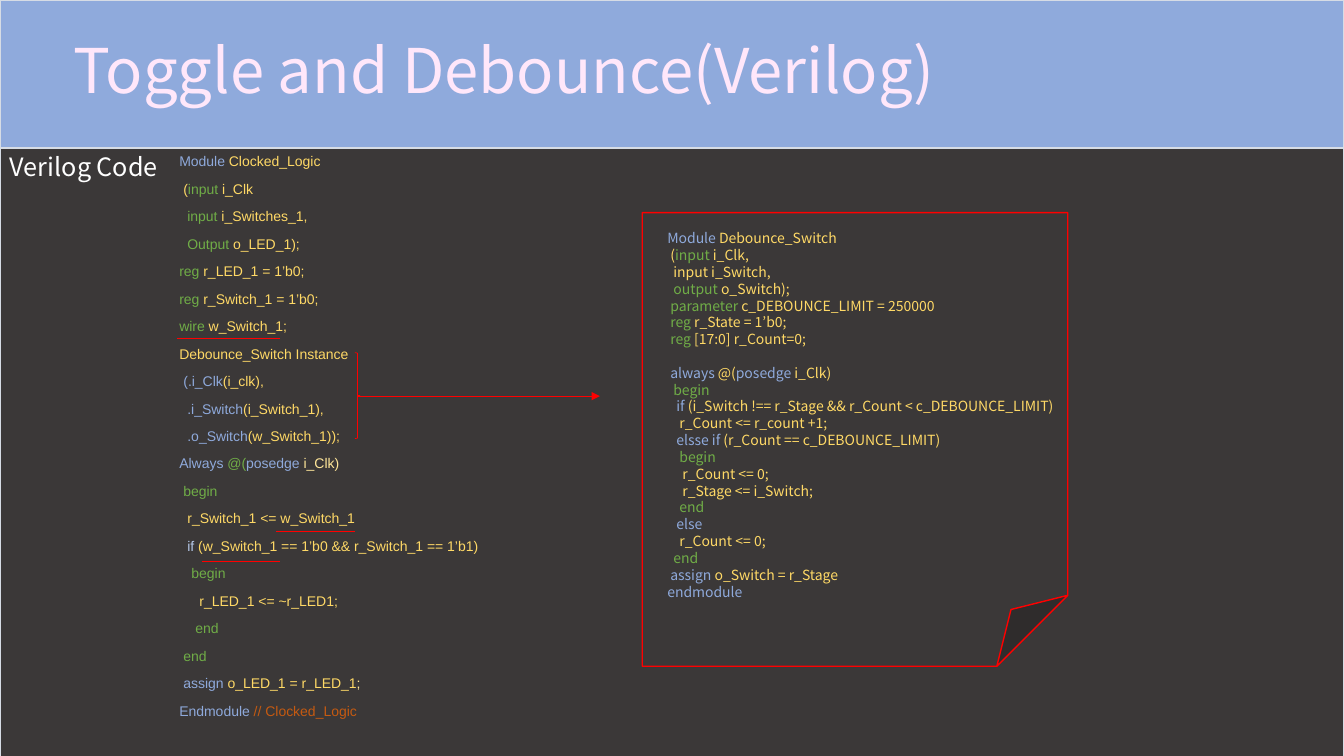
"""Build the Toggle and Debounce (Verilog) slide."""
from dataclasses import dataclass
from typing import NamedTuple

from lxml import etree
from pptx import Presentation
from pptx.dml.color import RGBColor
from pptx.enum.shapes import MSO_CONNECTOR, MSO_SHAPE
from pptx.enum.text import MSO_ANCHOR, MSO_AUTO_SIZE
from pptx.oxml.ns import qn
from pptx.shapes.connector import Connector
from pptx.slide import Slide
from pptx.text.text import TextFrame
from pptx.util import Inches, Pt

RECTANGLE = MSO_SHAPE.RECTANGLE
FOLDED_CORNER = MSO_SHAPE.FOLDED_CORNER
RIGHT_BRACE = MSO_SHAPE.RIGHT_BRACE
STRAIGHT = MSO_CONNECTOR.STRAIGHT
TOP = MSO_ANCHOR.TOP
MIDDLE = MSO_ANCHOR.MIDDLE
NO_AUTO_SIZE = MSO_AUTO_SIZE.NONE

CHARCOAL = RGBColor(0x3B, 0x38, 0x38)
PALE_BLUE = RGBColor(0xD6, 0xDC, 0xE5)
BLUE = RGBColor(0x8F, 0xAA, 0xDC)
LIGHT_BLUE = RGBColor(0xB4, 0xC7, 0xE7)
PINK = RGBColor(0xFF, 0xE7, 0xFA)
WHITE = RGBColor(0xFF, 0xFF, 0xFF)
RED = RGBColor(0xFF, 0x00, 0x00)
GREEN = RGBColor(0x70, 0xAD, 0x47)
YELLOW = RGBColor(0xFF, 0xD9, 0x66)
CREAM = RGBColor(0xFF, 0xE6, 0x99)
RUST = RGBColor(0xC5, 0x5A, 0x11)

HEADING_FONT = "Noto Sans CJK KR"
CODE_FONT = "Arial"


class Box(NamedTuple):
    """Left, top, width and height in inches."""
    left: float
    top: float
    width: float
    height: float


class Token(NamedTuple):
    """A piece of code in one colour."""
    text: str
    color: RGBColor = YELLOW


@dataclass
class CodeLine:
    """A line of code with its indent level and any extra gap in points."""
    indent: int
    tokens: list[Token]
    gap: float = 0


@dataclass
class Panel:
    """A preset shape with its outline and optional fill."""
    kind: MSO_SHAPE
    box: Box
    line: RGBColor
    weight: float = 1
    fill: RGBColor | None = None


@dataclass
class Rule:
    """A red line between two points, with an optional arrowhead."""
    start: tuple[float, float]
    end: tuple[float, float]
    arrow: bool = False


@dataclass
class Listing:
    """A block of code with its font and spacing."""
    box: Box
    font: str
    indent_step: float
    lines: list[CodeLine]
    line_spacing: float = 1.0
    space_before: float = 0


PANELS = [
    Panel(RECTANGLE, Box(0, 1.39, 13.33, 6.18), PALE_BLUE, fill=CHARCOAL),
    Panel(FOLDED_CORNER, Box(6.37, 2.11, 4.22, 4.5), RED, fill=CHARCOAL),
    Panel(RECTANGLE, Box(0, 0, 13.33, 1.47), PALE_BLUE, fill=BLUE),
    Panel(RIGHT_BRACE, Box(3.52, 3.5, 0.05, 0.85), RED, weight=0.5),
]

RULES = [
    Rule((1.76, 3.36), (2.78, 3.36)),
    Rule((2.74, 5.27), (3.52, 5.27)),
    Rule((2, 5.57), (2.78, 5.57)),
    Rule((3.55, 3.93), (5.95, 3.93), arrow=True),
]

CLOCKED_LOGIC = Listing(Box(1.68, 1.5, 4.28, 5.86), CODE_FONT, 0.04, [
    CodeLine(0, [Token("Module ", BLUE), Token("Clocked_Logic")]),
    CodeLine(1, [Token("("), Token("input ", GREEN), Token("i_Clk")]),
    CodeLine(2, [Token("input ", GREEN), Token("i_Switches_1,")]),
    CodeLine(2, [Token("Output", GREEN), Token(" o_LED_1);")]),
    CodeLine(0, [Token("reg", GREEN), Token(" r_LED_1 = 1’b0;")]),
    CodeLine(0, [Token("reg", GREEN), Token(" r_Switch_1 = 1’b0;")]),
    CodeLine(0, [Token("wire", GREEN), Token(" w_Switch_1;")]),
    CodeLine(0, [Token("Debounce_Switch Instance")]),
    CodeLine(1, [Token("(.i_Clk", BLUE), Token("(i_clk),")]),
    CodeLine(2, [Token(".i_Switch", BLUE), Token("(i_Switch_1),")]),
    CodeLine(2, [Token(".o_Switch", BLUE), Token("(w_Switch_1));")]),
    CodeLine(0, [Token("Always ", BLUE), Token("@(", GREEN), Token("posedge ", BLUE), Token("i_Clk)", CREAM)]),
    CodeLine(1, [Token("begin", GREEN)]),
    CodeLine(2, [Token("r_Switch_1 <= w_Switch_1")]),
    CodeLine(2, [Token("if", LIGHT_BLUE), Token(" (w_Switch_1 == 1’b0 && r_Switch_1 == 1’b1)")]),
    CodeLine(3, [Token("begin", GREEN)]),
    CodeLine(5, [Token("r_LED_1 <= ~r_LED1;")]),
    CodeLine(4, [Token("end", GREEN)]),
    CodeLine(1, [Token("end", GREEN)]),
    CodeLine(1, [Token("assign ", BLUE), Token("o_LED_1 = r_LED_1"), Token(";", CREAM)]),
    CodeLine(0, [Token("Endmodule ", BLUE), Token("// Clocked_Logic", RUST)]),
], line_spacing=0.8, space_before=10)

DEBOUNCE_SWITCH = Listing(Box(6.52, 2.23, 4.22, 3.8), HEADING_FONT, 0.03, [
    CodeLine(0, [Token("Module ", BLUE), Token("Debounce_Switch")]),
    CodeLine(1, [Token("("), Token("input ", GREEN), Token("i_Clk,")]),
    CodeLine(2, [Token("input i_Switch,")]),
    CodeLine(2, [Token("output ", GREEN), Token("o_Switch);")]),
    CodeLine(1, [Token("parameter ", GREEN), Token("c_DEBOUNCE_LIMIT = 250000")]),
    CodeLine(1, [Token("reg ", GREEN), Token("r_State = 1’b0;")]),
    CodeLine(1, [Token("reg ", GREEN), Token("[17:0] r_Count=0;")]),
    CodeLine(1, [Token("always ", BLUE), Token("@("), Token("posedge ", BLUE), Token("i_Clk)")], gap=12),
    CodeLine(2, [Token("begin", GREEN)]),
    CodeLine(3, [Token("if ", BLUE), Token("(i_Switch !== r_Stage && r_Count < c_DEBOUNCE_LIMIT)")]),
    CodeLine(4, [Token("r_Count <= r_count +1;")]),
    CodeLine(3, [Token("elsse if ", BLUE), Token("(r_Count == c_DEBOUNCE_LIMIT)")]),
    CodeLine(4, [Token("begin", GREEN)]),
    CodeLine(5, [Token("r_Count <= 0;")]),
    CodeLine(5, [Token("r_Stage <= i_Switch;")]),
    CodeLine(4, [Token("end", GREEN)]),
    CodeLine(3, [Token("else", BLUE)]),
    CodeLine(4, [Token("r_Count <= 0;")]),
    CodeLine(2, [Token("end", GREEN)]),
    CodeLine(1, [Token("assign ", BLUE), Token("o_Switch = r_Stage")]),
    CodeLine(0, [Token("endmodule", BLUE)]),
])


def add_panel(slide: Slide, panel: Panel) -> None:
    """Draw a preset shape."""
    shape = slide.shapes.add_shape(panel.kind, *map(Inches, panel.box))
    shape.shadow.inherit = False
    shape.line.color.rgb = panel.line
    shape.line.width = Pt(panel.weight)
    if panel.fill is None:
        shape.fill.background()
    else:
        shape.fill.solid()
        shape.fill.fore_color.rgb = panel.fill


def add_rule(slide: Slide, rule: Rule) -> Connector:
    """Draw a thin red line or arrow."""
    connector = slide.shapes.add_connector(STRAIGHT, *map(Inches, rule.start + rule.end))
    connector.line.color.rgb = RED
    connector.line.width = Pt(0.5)
    properties = connector._element.spPr
    if rule.arrow:
        etree.SubElement(properties.find(qn("a:ln")), qn("a:tailEnd"), type="triangle")
    etree.SubElement(properties, qn("a:effectLst"))
    return connector


def add_text_frame(slide: Slide, box: Box, anchor: MSO_ANCHOR = TOP, wrap: bool = True) -> TextFrame:
    """Place an empty text box and return its frame."""
    frame = slide.shapes.add_textbox(*map(Inches, box)).text_frame
    frame.word_wrap = wrap
    frame.auto_size = NO_AUTO_SIZE
    frame.vertical_anchor = anchor
    return frame


def add_heading(frame: TextFrame, text: str, size: float, color: RGBColor, spacing: float = 1.0) -> None:
    """Fill a frame with one heading line."""
    paragraph = frame.paragraphs[0]
    paragraph.text = text
    paragraph.line_spacing = spacing
    paragraph.font.name = HEADING_FONT
    paragraph.font.size = Pt(size)
    paragraph.font.color.rgb = color


def add_listing(slide: Slide, listing: Listing) -> None:
    """Write a block of coloured code."""
    frame = add_text_frame(slide, listing.box)
    for index, line in enumerate(listing.lines):
        paragraph = frame.add_paragraph() if index else frame.paragraphs[0]
        paragraph.line_spacing = listing.line_spacing
        paragraph.space_before = Pt(listing.space_before + line.gap)
        paragraph.font.name = listing.font
        paragraph.font.size = Pt(10)
        paragraph._p.get_or_add_pPr().set("marL", str(Inches(line.indent * listing.indent_step)))
        for token in line.tokens:
            run = paragraph.add_run()
            run.text = token.text
            run.font.color.rgb = token.color


def main() -> None:
    """Assemble and save the slide."""
    presentation = Presentation()
    presentation.slide_width, presentation.slide_height = Inches(13.33), Inches(7.5)
    slide = presentation.slides.add_slide(presentation.slide_layouts[6])
    for panel in PANELS:
        add_panel(slide, panel)
    add_heading(add_text_frame(slide, Box(0.63, 0.03, 12.26, 1.4), MIDDLE), "Toggle and Debounce(Verilog)", 44, PINK, 0.9)
    add_heading(add_text_frame(slide, Box(0, 1.45, 1.68, 0.4), wrap=False), "Verilog Code", 18, WHITE)
    for listing in (CLOCKED_LOGIC, DEBOUNCE_SWITCH):
        add_listing(slide, listing)
    for rule in RULES:
        add_rule(slide, rule)
    presentation.save("out.pptx")


if __name__ == "__main__":
    main()
